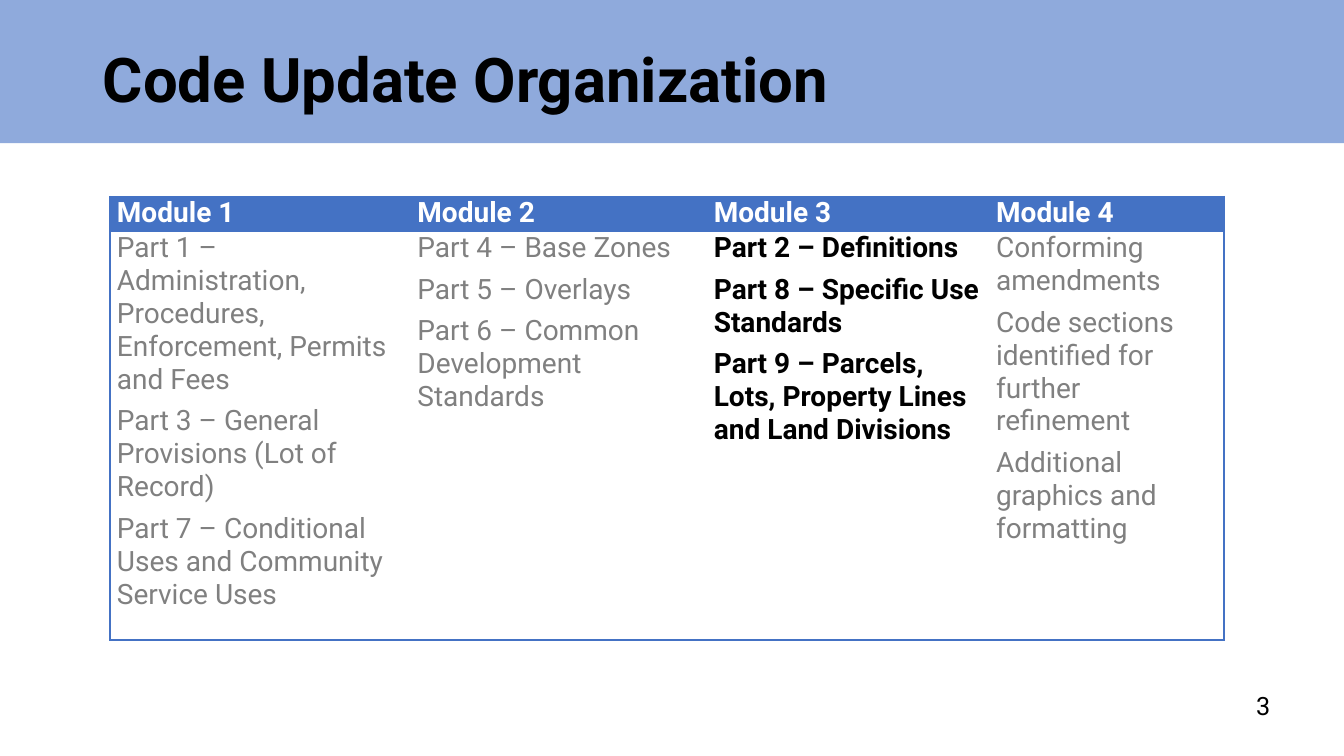
from dataclasses import dataclass

from lxml import etree
from pptx import Presentation
from pptx.dml.color import RGBColor
from pptx.enum.shapes import MSO_SHAPE
from pptx.enum.text import MSO_ANCHOR, MSO_AUTO_SIZE, PP_ALIGN
from pptx.oxml.ns import qn
from pptx.util import Inches, Pt

RECTANGLE = MSO_SHAPE.RECTANGLE
MIDDLE, TOP = MSO_ANCHOR.MIDDLE, MSO_ANCHOR.TOP
NO_AUTOFIT, GROW = MSO_AUTO_SIZE.NONE, MSO_AUTO_SIZE.SHAPE_TO_FIT_TEXT
LEFT = PP_ALIGN.LEFT
TITLE_ONLY = 5


@dataclass(frozen=True)
class Theme:
    font: str = "Roboto"
    band: str = "8FAADC"
    accent: str = "4472C4"
    white: str = "FFFFFF"
    black: str = "000000"
    muted: str = "808080"
    title_size: int = 44
    table_size: int = 20
    number_size: int = 18


THEME = Theme()
CURRENT_MODULE = "Module 3"
COLUMN_WIDTHS = (2.98, 2.94, 2.8, 2.33)
ROW_HEIGHTS = (0.35, 4.05)
MODULES = {
    "Module 1": [
        "Part 1 – Administration, Procedures, Enforcement, Permits and Fees",
        "Part 3 – General Provisions (Lot of Record)",
        "Part 7 – Conditional Uses and Community Service Uses",
    ],
    "Module 2": [
        "Part 4 – Base Zones",
        "Part 5 – Overlays",
        "Part 6 – Common Development Standards",
    ],
    "Module 3": [
        "Part 2 – Definitions",
        "Part 8 – Specific Use Standards",
        "Part 9 – Parcels, Lots, Property Lines and Land Divisions",
    ],
    "Module 4": [
        "Conforming amendments",
        "Code sections identified for further refinement",
        "Additional graphics and formatting",
    ],
}


def write(tf, paragraphs, *, size, color=THEME.black, bold=False, gap=0, line=1.0):
    """Fill a text frame; gap is the space in points between paragraphs."""
    for i, text in enumerate(paragraphs):
        p = tf.paragraphs[0] if i == 0 else tf.add_paragraph()
        p.alignment = LEFT
        p.line_spacing = line
        p.space_before = Pt(gap if i else 0)
        r = p.add_run()
        r.text = text
        r.font.name = THEME.font
        r.font.size = Pt(size)
        r.font.bold = bold
        r.font.color.rgb = RGBColor.from_string(color)


def add_title_band(s, text):
    band = s.shapes.add_shape(RECTANGLE, 0, 0, Inches(13.33), Inches(1.42))
    band.shadow.inherit = False
    band.fill.solid()
    band.fill.fore_color.rgb = RGBColor.from_string(THEME.band)
    band.line.fill.background()

    title = s.shapes.title
    title.left, title.top = Inches(0.92), Inches(0.09)
    title.width, title.height = Inches(11.5), Inches(1.45)
    title._element.addprevious(band._element)
    tf = title.text_frame
    tf.auto_size = NO_AUTOFIT
    tf.word_wrap = True
    tf.vertical_anchor = MIDDLE
    write(tf, [text], size=THEME.title_size, bold=True, line=0.9)


def set_borders(cell, sides):
    """Draw the named sides (letters of LRTB) and clear the others."""
    tcPr = cell._tc.get_or_add_tcPr()
    for i, side in enumerate("LRTB"):
        ln = etree.Element(qn(f"a:ln{side}"), w=str(Pt(1)))
        if side in sides:
            fill = etree.SubElement(ln, qn("a:solidFill"))
            etree.SubElement(fill, qn("a:srgbClr"), val=THEME.accent)
        else:
            etree.SubElement(ln, qn("a:noFill"))
        tcPr.insert(i, ln)


def fill_cell(cell, paragraphs, *, fill, sides, **text_format):
    cell.margin_left = cell.margin_right = Inches(0.07)
    cell.margin_top = cell.margin_bottom = 0
    cell.vertical_anchor = TOP
    cell.fill.solid()
    cell.fill.fore_color.rgb = RGBColor.from_string(fill)
    set_borders(cell, sides)
    write(cell.text_frame, paragraphs, size=THEME.table_size, **text_format)


def add_module_table(s):
    table = s.shapes.add_table(
        len(ROW_HEIGHTS), len(MODULES), Inches(1.09), Inches(1.95),
        Inches(sum(COLUMN_WIDTHS)), Inches(sum(ROW_HEIGHTS))).table
    table.horz_banding = False
    for row, height in zip(table.rows, ROW_HEIGHTS):
        row.height = Inches(height)
    for column, width in zip(table.columns, COLUMN_WIDTHS):
        column.width = Inches(width)

    last = len(MODULES) - 1
    for col, (module, parts) in enumerate(MODULES.items()):
        outer = "L" if col == 0 else "R" if col == last else ""
        current = module == CURRENT_MODULE
        fill_cell(table.cell(0, col), [module], fill=THEME.accent,
                  sides="TB" + outer, color=THEME.white, bold=True)
        fill_cell(table.cell(1, col), parts, fill=THEME.white,
                  sides="TB" + outer, bold=current, gap=6,
                  color=THEME.black if current else THEME.muted)


def add_page_number(s, number):
    box = s.shapes.add_textbox(Inches(12.36), Inches(6.8), Inches(0.34), Inches(0.4))
    tf = box.text_frame
    tf.word_wrap = False
    tf.auto_size = GROW
    write(tf, [number], size=THEME.number_size)


def main():
    prs = Presentation()
    prs.slide_width, prs.slide_height = Inches(13.33), Inches(7.5)
    s = prs.slides.add_slide(prs.slide_layouts[TITLE_ONLY])
    add_title_band(s, "Code Update Organization")
    add_module_table(s)
    add_page_number(s, "3")
    prs.save("out.pptx")


if __name__ == "__main__":
    main()
